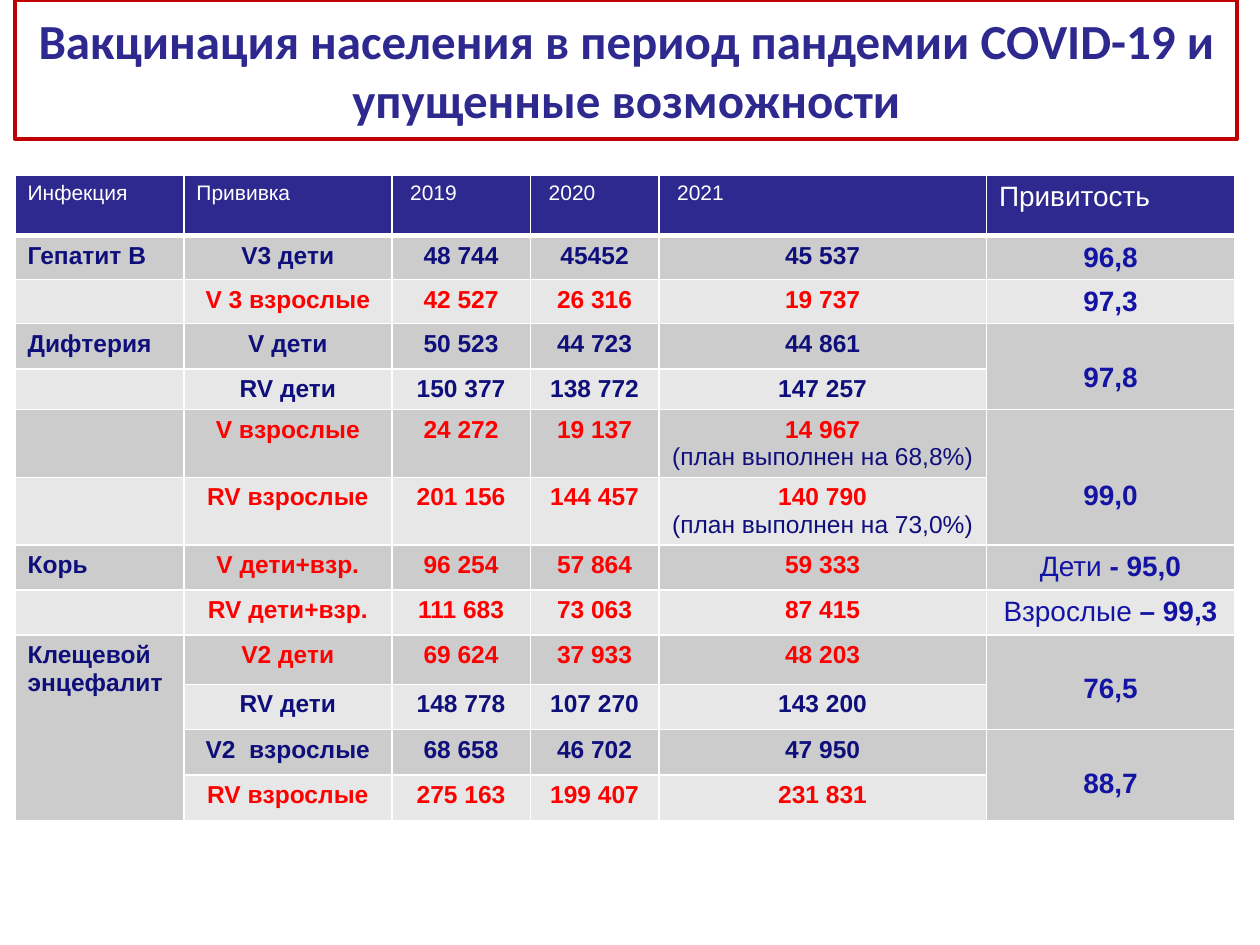
from lxml import etree
from pptx import Presentation
from pptx import util as u
from pptx.dml.color import RGBColor
from pptx.enum import shapes, text
from pptx.oxml import ns

HUES = {
    "white": "FFFFFF", "head": "2E298F", "edge": "C00000", "navy": "0F0F7B",
    "red": "FF0000", "rate": "1414A4", "dark": "CCCCCC", "pale": "E7E7E7",
}
MID, LEFT = text.PP_ALIGN.CENTER, text.PP_ALIGN.LEFT

WIDTHS = [96.5, 118.8, 79.2, 73.4, 187.2, 141.8]
HEIGHTS = [34.4, 25.2, 25.2, 25.9, 23.2, 38.7, 38.7, 25.6, 25.9, 28.2, 25.9, 25.9, 25.9]
HEADS = ["Инфекция", "Прививка", "2019", "2020", "2021", "Привитость"]

# Infection, vaccine, three yearly counts, colour, note on the plan
ROWS = [
    ("Гепатит В", "V3 дети", "48 744", "45452", "45 537", "navy", ""),
    ("", "V 3 взрослые", "42 527", "26 316", "19 737", "red", ""),
    ("Дифтерия", "V дети", "50 523", "44 723", "44 861", "navy", ""),
    ("", "RV дети", "150 377", "138 772", "147 257", "navy", ""),
    ("", "V взрослые", "24 272", "19 137", "14 967", "red", "(план выполнен на 68,8%)"),
    ("", "RV взрослые", "201 156", "144 457", "140 790", "red", "(план выполнен на 73,0%)"),
    ("Корь", "V дети+взр.", "96 254", "57 864", "59 333", "red", ""),
    ("", "RV дети+взр.", "111 683", "73 063", "87 415", "red", ""),
    ("Клещевой энцефалит", "V2 дети", "69 624", "37 933", "48 203", "red", ""),
    ("", "RV дети", "148 778", "107 270", "143 200", "navy", ""),
    ("", "V2  взрослые", "68 658", "46 702", "47 950", "navy", ""),
    ("", "RV взрослые", "275 163", "199 407", "231 831", "red", ""),
]
# First row: (rows spanned, top margin, plain part, bold part)
RATES = {
    1: (1, 3.6, "", "96,8"), 2: (1, 3.6, "", "97,3"),
    3: (2, 22, "", "97,8"), 5: (2, 40.4, "", "99,0"),
    7: (1, 3.6, "Дети", " - 95,0"), 8: (1, 3.6, "Взрослые", " – 99,3"),
    9: (2, 22, "", "76,5"), 11: (2, 22, "", "88,7"),
}


def hue(name):
    return RGBColor.from_string(HUES[name])


class Deck:
    def __init__(self):
        self.prs = Presentation()
        self.prs.slide_width, self.prs.slide_height = u.Pt(720), u.Pt(540)
        self.slide = self.prs.slides.add_slide(self.prs.slide_layouts[6])

    def style(self, para, size, color, bold=False, align=LEFT, face="Arial"):
        para.alignment = align
        font = para.font
        font.name, font.size, font.bold = face, u.Pt(size), bold
        font.color.rgb = hue(color)

    def title(self, words, x, y, w, h):
        box = self.slide.shapes.add_shape(
            shapes.MSO_SHAPE.RECTANGLE, *map(u.Pt, (x, y, w, h)))
        box.shadow.inherit = False
        box.fill.background()
        box.line.color.rgb, box.line.width = hue("edge"), u.Pt(2)
        frame = box.text_frame
        frame.word_wrap = True
        frame.vertical_anchor = text.MSO_ANCHOR.MIDDLE
        frame.text = words
        self.style(frame.paragraphs[0], 28, "head", True, MID, "Calibri")

    def table(self, x, y, widths, heights):
        grid = self.slide.shapes.add_table(
            len(heights), len(widths),
            *map(u.Pt, (x, y, sum(widths), sum(heights)))).table
        for col, w in zip(grid.columns, widths):
            col.width = u.Pt(w)
        for row, h in zip(grid.rows, heights):
            row.height = u.Pt(h)
        for r in range(len(heights)):
            tone = "head" if r == 0 else "dark" if r % 2 else "pale"
            for cell in grid.rows[r].cells:
                self.edges(cell, 1 if r else 3)
                cell.fill.solid()
                cell.fill.fore_color.rgb = hue(tone)
                self.style(cell.text_frame.paragraphs[0], 14, "navy")
        return grid

    def edges(self, cell, base):
        props = cell._tc.get_or_add_tcPr()
        for side, width in zip("LRTB", (1, 1, 1, base)):
            line = etree.SubElement(props, ns.qn(f"a:ln{side}"), w=str(u.Pt(width)))
            fill = etree.SubElement(line, ns.qn("a:solidFill"))
            etree.SubElement(fill, ns.qn("a:srgbClr"), val=HUES["white"])

    def entry(self, cell, words, size, color, bold=True, align=MID, note=""):
        frame = cell.text_frame
        frame.text = words
        self.style(frame.paragraphs[0], size, color, bold, align)
        if note:
            para = frame.add_paragraph()
            para.text = note
            self.style(para, size, "navy", False, align)

    def rate(self, cell, top, plain, strong):
        cell.margin_top = u.Pt(top)
        para = cell.text_frame.paragraphs[0]
        self.style(para, 16, "rate", True, MID)
        if plain:
            run = para.add_run()
            run.text, run.font.bold = plain, False
        para.add_run().text = strong


def main():
    deck = Deck()
    deck.title("Вакцинация населения в период пандемии COVID-19 и упущенные возможности",
               8.6, 0, 698.4, 79.5)
    grid = deck.table(8.6, 100.2, WIDTHS, HEIGHTS)

    # Header row
    for c, words in enumerate(HEADS):
        cell = grid.cell(0, c)
        deck.entry(cell, words, 16 if c == 5 else 12, "white", False, LEFT)
        if 2 <= c <= 4:
            cell.margin_left = u.Pt(10.5)

    # Merged cells
    grid.cell(9, 0).merge(grid.cell(12, 0))
    for r, (span, *_) in RATES.items():
        if span > 1:
            grid.cell(r, 5).merge(grid.cell(r + span - 1, 5))

    # Vaccine counts
    for r, (name, *counts, color, note) in enumerate(ROWS, 1):
        if name:
            deck.entry(grid.cell(r, 0), name, 14, "navy", align=LEFT)
        for c, words in enumerate(counts, 1):
            deck.entry(grid.cell(r, c), words, 14, color, note=note if c == 4 else "")

    # Coverage rates
    for r, (_, *parts) in RATES.items():
        deck.rate(grid.cell(r, 5), *parts)

    deck.prs.save("out.pptx")


if __name__ == "__main__":
    main()
